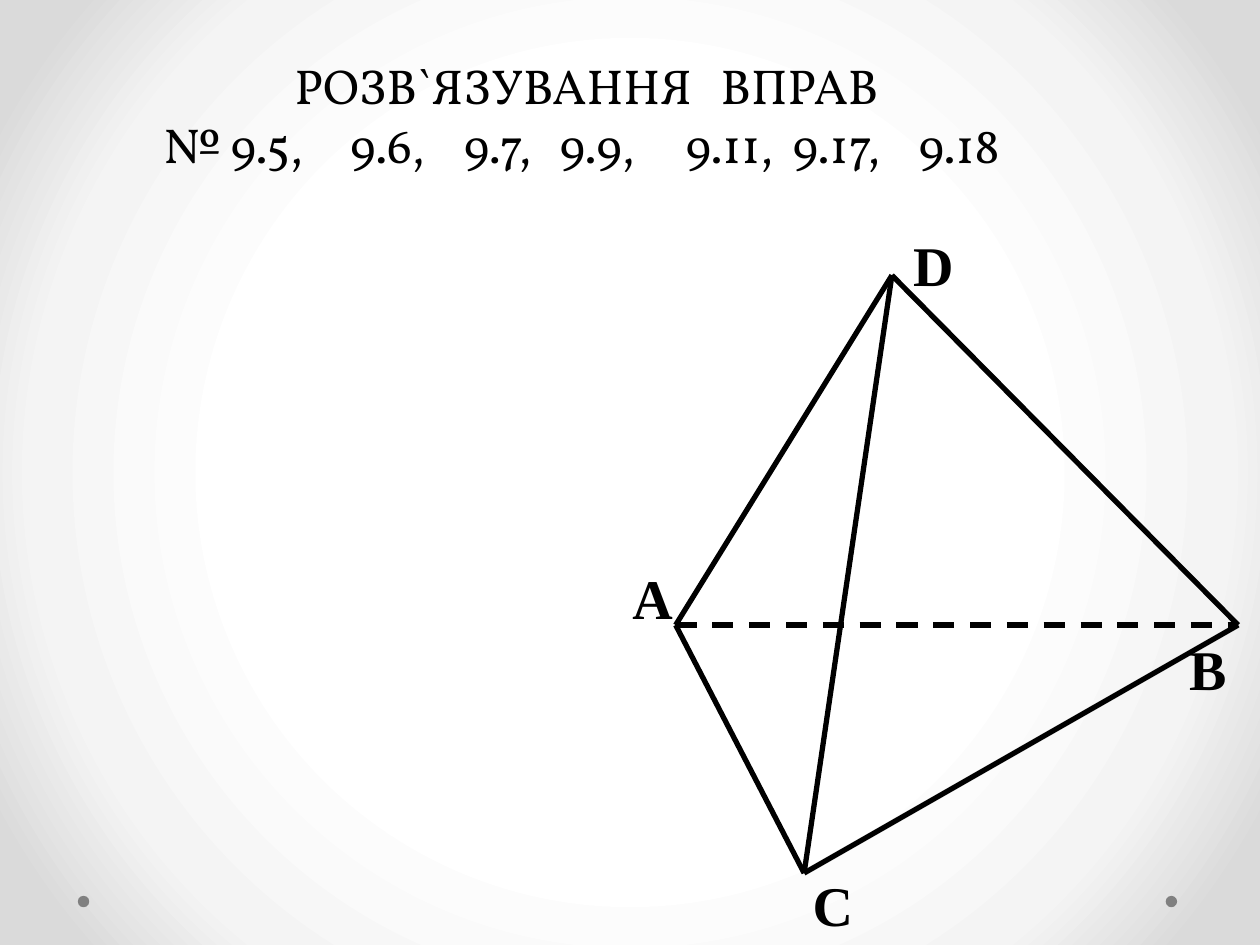
from lxml.etree import SubElement
from pptx import Presentation
from pptx.dml.color import RGBColor
from pptx.enum.dml import MSO_LINE_DASH_STYLE as Dash
from pptx.enum.shapes import MSO_CONNECTOR, MSO_SHAPE
from pptx.enum.text import MSO_AUTO_SIZE as AutoSize
from pptx.oxml.ns import qn
from pptx.util import Cm, Pt

BLACK = RGBColor(0, 0, 0)
GREY = RGBColor(0x80, 0x80, 0x80)
GLOW = [(50, "FFFFFF"), (76, "F4F4F4"), (92, "DADADA")]

HEADING = [
    (["РОЗВ`ЯЗУВАННЯ", "ВПРАВ"], [4.29, 12.88]),
    (["№ 9.5,", "9.6,", "9.7,", "9.9,", "9.11,", "9.17,", "9.18"],
     [1.65, 5.41, 7.7, 9.63, 12.17, 14.33, 16.87]),
]
VERTICES = {
    "А": (13.62, 12.6),
    "В": (24.96, 12.6),
    "С": (16.21, 17.6),
    "D": (17.98, 5.55),
}
LABELS = {
    "А": (12.5, 11.23),
    "С": (16.13, 17.42),
    "В": (23.72, 12.67),
    "D": (18.16, 4.52),
}
EDGES = [("А", "В"), ("С", "В"), ("А", "С"), ("С", "D"), ("D", "А"), ("D", "В")]
HIDDEN_EDGE = ("А", "В")
DOT_LEFTS = [23.5, 1.57]


def paint_background(slide):
    slide.background.fill.gradient()
    gradient = next(slide.element.iter(qn("a:gradFill")))
    for child in list(gradient):
        gradient.remove(child)
    stops = SubElement(gradient, qn("a:gsLst"))
    for position, color in GLOW:
        stop = SubElement(stops, qn("a:gs"), pos=str(position * 1000))
        SubElement(stop, qn("a:srgbClr"), val=color)
    circle = SubElement(gradient, qn("a:path"), path="circle")
    SubElement(circle, qn("a:fillToRect"), dict.fromkeys("ltrb", "50000"))


def style(paragraph, font_name, size, bold=False):
    for run in paragraph.runs:
        run.font.name = font_name
        run.font.size = Pt(size)
        run.font.bold = bold
        run.font.color.rgb = BLACK


def add_dot(slide, left):
    dot = slide.shapes.add_shape(MSO_SHAPE.OVAL, Cm(left), Cm(18.06), Cm(0.23), Cm(0.23))
    dot.shadow.inherit = False
    dot.fill.solid()
    dot.fill.fore_color.rgb = GREY
    dot.line.fill.background()


def add_heading(slide):
    frame = slide.shapes.add_textbox(Cm(1.4), Cm(0.99), Cm(20.83), Cm(2.64)).text_frame
    frame.word_wrap = True
    frame.auto_size = AutoSize.SHAPE_TO_FIT_TEXT
    frame.text = "\n".join("\t" + "\t".join(words) for words, _ in HEADING)
    for paragraph, (_, positions) in zip(frame.paragraphs, HEADING):
        style(paragraph, "Vollkorn", 28)
        properties = paragraph._p.get_or_add_pPr()
        tabs = SubElement(properties, qn("a:tabLst"))
        for position in positions:
            SubElement(tabs, qn("a:tab"), pos=str(Cm(position)), algn="l")


def add_edge(slide, edge):
    (x1, y1), (x2, y2) = (VERTICES[name] for name in edge)
    side = slide.shapes.add_connector(MSO_CONNECTOR.STRAIGHT, Cm(x1), Cm(y1), Cm(x2), Cm(y2))
    side.line.color.rgb = BLACK
    side.line.width = Pt(3)
    if edge == HIDDEN_EDGE:
        side.line.dash_style = Dash.DASH
    SubElement(side._element.spPr, qn("a:effectLst"))


def add_label(slide, name, left, top):
    frame = slide.shapes.add_textbox(Cm(left), Cm(top), Cm(1.22), Cm(1.63)).text_frame
    frame.word_wrap = False
    frame.auto_size = AutoSize.SHAPE_TO_FIT_TEXT
    frame.text = name
    style(frame.paragraphs[0], "Times New Roman", 32, True)


def main():
    deck = Presentation()
    deck.slide_width, deck.slide_height = Cm(25.4), Cm(19.05)
    slide = deck.slides.add_slide(deck.slide_layouts[6])
    paint_background(slide)
    for left in DOT_LEFTS:
        add_dot(slide, left)
    add_heading(slide)
    for edge in EDGES:
        add_edge(slide, edge)
    for name, (left, top) in LABELS.items():
        add_label(slide, name, left, top)
    deck.save("out.pptx")


if __name__ == "__main__":
    main()
